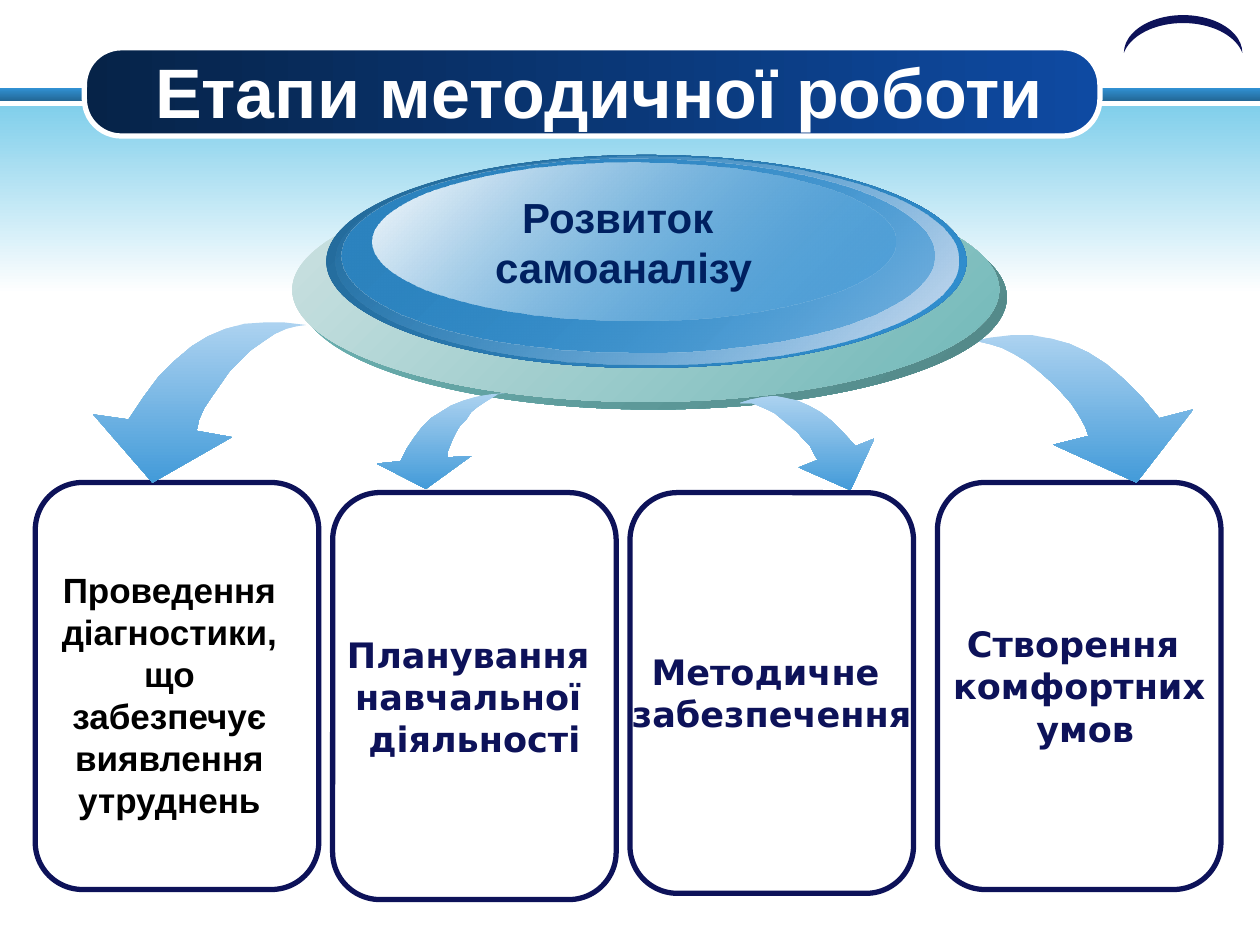
from lxml import etree
from pptx import Presentation
from pptx.dml.color import RGBColor
from pptx.enum.shapes import MSO_SHAPE as Kind
from pptx.enum.text import MSO_ANCHOR as Anchor, PP_ALIGN as Align
from pptx.oxml.ns import qn
from pptx.util import Inches, Pt

WHITE = RGBColor(0xFF, 0xFF, 0xFF)
BLACK = RGBColor(0, 0, 0)
NAVY = RGBColor(0x0D, 0x12, 0x59)
INK = RGBColor(0x00, 0x20, 0x60)
BLUE = RGBColor(0x31, 0x91, 0xD3)
MID = RGBColor(0x2C, 0x83, 0xBF)
DEEP = RGBColor(0x23, 0x68, 0x97)
PALE = RGBColor(0xD5, 0xE1, 0xF1)
SKY = RGBColor(0x81, 0xCF, 0xEB)
DUSK = RGBColor(0x06, 0x23, 0x48)
ROYAL = RGBColor(0x0E, 0x4A, 0xA2)
TEAL = RGBColor(0x6F, 0xB7, 0xB7)
MOSS = RGBColor(0x51, 0x86, 0x86)
MIST = RGBColor(0xCF, 0xE3, 0xE3)
LIGHT = RGBColor(0xAC, 0xD2, 0xF0)
AZURE = RGBColor(0x43, 0x9B, 0xD9)

deck = Presentation()
deck.slide_width, deck.slide_height = Inches(10), Inches(7.5)
slide = deck.slides.add_slide(deck.slide_layouts[6])
shapes = slide.shapes


def shade(shape, first, last, angle, alphas=(100, 100)):
    """Fill with a two-colour gradient, angle clockwise, alphas in percent."""
    shape.shadow.inherit = False
    shape.line.fill.background()
    shape.fill.gradient()
    shape.fill.gradient_angle = (360 - angle) % 360
    for stop, color in zip(shape.fill.gradient_stops, (first, last)):
        stop.color.rgb = color
    tints = shape._element.spPr.findall(".//" + qn("a:srgbClr"))
    for tint, alpha in zip(tints, alphas):
        if alpha < 100:
            etree.SubElement(tint, qn("a:alpha"), val=str(alpha * 1000))


def arrow(points):
    """Draw a curved arrow through points in hundredths of an inch."""
    pen = shapes.build_freeform(*points[0], scale=Inches(0.01))
    pen.add_line_segments(points[1:], close=True)
    shade(pen.convert_to_shape(), LIGHT, AZURE, 90)


# Background bands, title pill and corner arc
for top, height, first, last in [(0.7, 0.1, BLUE, DEEP), (0.84, 1.49, SKY, WHITE)]:
    band = shapes.add_shape(Kind.RECTANGLE, 0, Inches(top), Inches(10), Inches(height))
    shade(band, first, last, 90)

pill = shapes.add_shape(Kind.ROUNDED_RECTANGLE, Inches(0.67), Inches(0.38),
                        Inches(8.06), Inches(0.7))
pill.adjustments[0] = 0.42
shade(pill, DUSK, ROYAL, 0)
pill.line.color.rgb = WHITE
pill.line.width = Pt(3)

arc = shapes.add_shape(Kind.MOON, Inches(9.24), Inches(-0.2), Inches(0.3), Inches(0.94))
arc.rotation = 90
arc.adjustments[0] = 0.21
arc.shadow.inherit = False
arc.fill.solid()
arc.fill.fore_color.rgb = NAVY
arc.line.fill.background()

# Cards
cards = []
for left, top, height in [(0.28, 3.83, 3.23), (2.64, 3.91, 3.23),
                          (5, 3.91, 3.18), (7.44, 3.83, 3.23)]:
    card = shapes.add_shape(Kind.ROUNDED_RECTANGLE, Inches(left), Inches(top),
                            Inches(2.25), Inches(height))
    card.shadow.inherit = False
    card.fill.background()
    card.line.color.rgb = NAVY
    card.line.width = Pt(3)
    cards.append(card)

# Outer arrows lie under the disc
arrow([(768, 272), (786, 268), (803, 266), (819, 266), (835, 269), (849, 273),
       (864, 280), (878, 289), (892, 301), (906, 315), (920, 332), (947, 325),
       (902, 383), (836, 353), (864, 346), (861, 338), (856, 329), (850, 320),
       (842, 311), (834, 303), (825, 295), (815, 287), (805, 281), (795, 276),
       (785, 273), (776, 271)])
arrow([(243, 258), (226, 256), (209, 256), (194, 257), (179, 261), (165, 267),
       (152, 275), (139, 286), (126, 299), (114, 315), (102, 333), (74, 329),
       (121, 383), (184, 347), (156, 342), (158, 333), (162, 324), (168, 315),
       (175, 305), (182, 295), (190, 287), (199, 278), (209, 271), (218, 265),
       (227, 261), (235, 259)])

# Layered disc
for left, top, width, height, first, last, alphas in [
    (2.38, 1.47, 5.61, 1.78, TEAL, MOSS, (100, 100)),
    (2.32, 1.41, 5.61, 1.78, MIST, TEAL, (100, 100)),
    (2.59, 1.23, 5.08, 1.69, DEEP, BLUE, (100, 100)),
    (2.66, 1.24, 4.95, 1.65, BLUE, PALE, (0, 100)),
    (2.71, 1.26, 4.71, 1.54, MID, BLUE, (100, 48)),
    (2.96, 1.29, 4.15, 1.25, WHITE, BLUE, (100, 38)),
]:
    disc = shapes.add_shape(Kind.OVAL, Inches(left), Inches(top),
                            Inches(width), Inches(height))
    shade(disc, first, last, 45, alphas)

# Inner arrows lie over the disc
arrow([(401, 312), (389, 313), (378, 315), (368, 318), (358, 322), (350, 327),
       (342, 332), (335, 339), (329, 347), (323, 356), (318, 366), (299, 368),
       (338, 388), (374, 362), (355, 363), (355, 359), (357, 354), (359, 349),
       (362, 343), (365, 338), (370, 333), (374, 327), (379, 323), (385, 319),
       (390, 316), (395, 313)])
arrow([(587, 320), (596, 317), (606, 315), (615, 314), (624, 316), (633, 318),
       (642, 322), (651, 327), (660, 334), (669, 343), (679, 354), (694, 348),
       (675, 389), (634, 371), (649, 365), (646, 360), (643, 354), (638, 349),
       (633, 343), (627, 338), (621, 333), (615, 328), (609, 325), (602, 322),
       (597, 320), (591, 320)])

# Text
title = shapes.add_textbox(Inches(0.92), Inches(0.41), Inches(7.67), Inches(0.62))
goal = shapes.add_textbox(Inches(3.82), Inches(1.47), Inches(2.26), Inches(0.91))
first = shapes.add_textbox(Inches(0.28), Inches(4.46), Inches(2.13), Inches(2.12))
for box, lines, size, font, color, wrap in [
    (title, ["Етапи методичної роботи"], 40, "Arial", WHITE, True),
    (goal, ["Розвиток ", "самоаналізу"], 24, "Arial", INK, False),
    (first, ["Проведення діагностики, що забезпечує виявлення утруднень"],
     20, "Arial", BLACK, True),
    (cards[1], ["Планування ", "навчальної ", "діяльності"],
     20, "DejaVu Sans", NAVY, False),
    (cards[2], ["Методичне ", "забезпечення"], 20, "DejaVu Sans", NAVY, False),
    (cards[3], ["Створення ", "комфортних", " умов"], 20, "DejaVu Sans", NAVY, False),
]:
    frame = box.text_frame
    frame.word_wrap = wrap
    frame.vertical_anchor = Anchor.TOP if box in (goal, first) else Anchor.MIDDLE
    for i, line in enumerate(lines):
        para = frame.add_paragraph() if i else frame.paragraphs[0]
        para.alignment = Align.CENTER
        run = para.add_run()
        run.text = line
        run.font.size = Pt(size)
        run.font.name = font
        run.font.bold = True
        run.font.color.rgb = color

deck.save("out.pptx")
